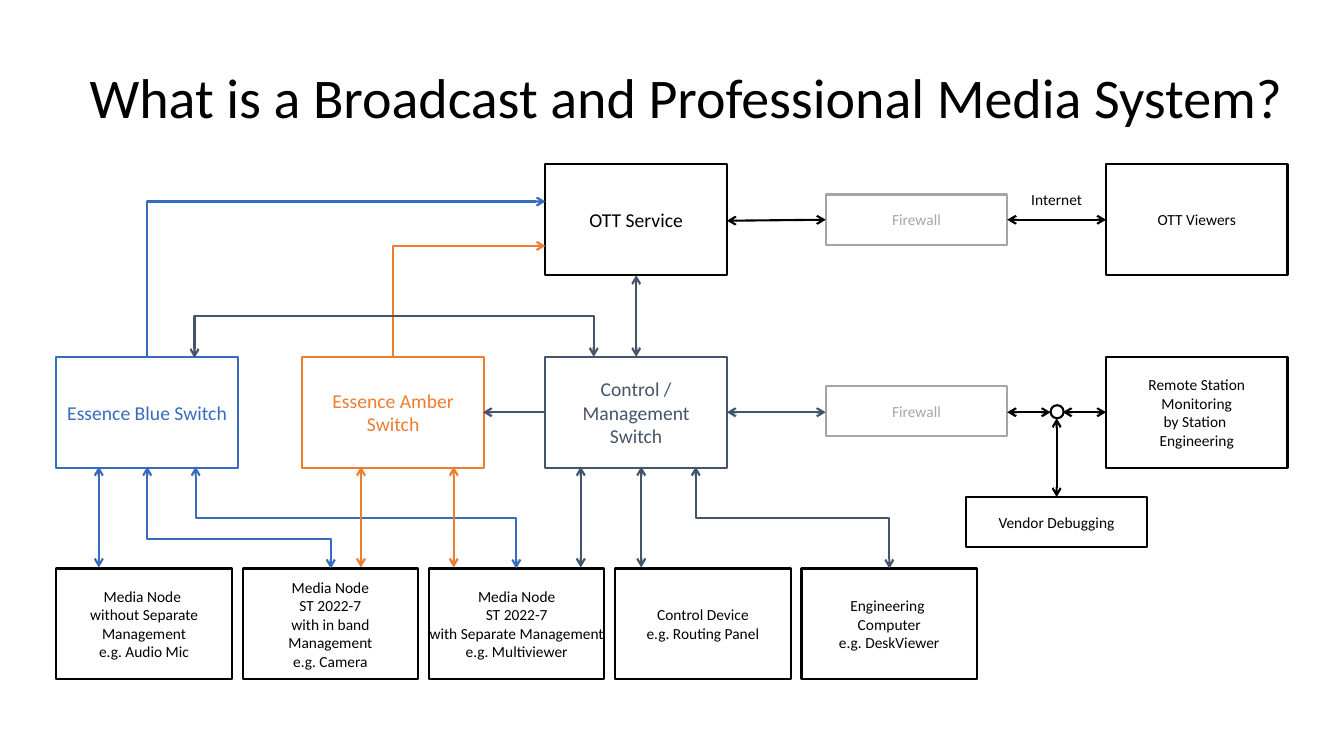
from dataclasses import dataclass

from pptx import Presentation
from pptx import util as u
from pptx.dml.color import RGBColor
from pptx.enum import shapes, text
from pptx.oxml.ns import qn
from lxml import etree

FONT = "Calibri"
BLACK, WHITE, GREY = "000000", "FFFFFF", "A5A5A5"
BLUE, AMBER, SLATE = "376BBF", "ED7D31", "44546A"
LINE_PT = 1.5
BOX_W, BOX_H, SLIM_H = 1.8, 1.1, 0.5
NODE_W, NODE_PITCH = 1.74, 1.8475
LEFT, OTT_Y, SWITCH_Y, NODE_Y = 0.56, 1.63, 3.54, 5.64
CONTROL_X, FIREWALL_X, RIGHT_X = 5.41, 8.19, 10.97
SWITCH_BOTTOM, NODE_TOP = 4.63, 5.63


@dataclass
class Box:
    x: float
    y: float
    paragraphs: tuple[str, ...]
    w: float = BOX_W
    h: float = BOX_H
    size: int = 11
    color: str = BLACK
    inset: bool = True


@dataclass
class Arrow:
    x1: float
    y1: float
    x2: float
    y2: float
    color: str = BLACK
    both: bool = True


@dataclass
class Elbow(Arrow):
    """Leaves vertically; bends at height via_y, or at y2 if that is None."""
    via_y: float | None = None


NODES = [
    ("Media Node ", "without Separate Management", "e.g. Audio Mic"),
    ("Media Node", "ST 2022-7", "with in band\nManagement", "e.g. Camera"),
    ("Media Node", "ST 2022-7", "with Separate Management", "e.g. Multiviewer"),
    ("Control Device\ne.g. Routing Panel",),
    ("Engineering \nComputer", "e.g. DeskViewer"),
]

BOXES = [
    Box(CONTROL_X, OTT_Y, ("OTT Service",), size=14),
    Box(CONTROL_X, SWITCH_Y, ("Control / Management Switch",), size=14, color=SLATE),
    Box(3, SWITCH_Y, ("Essence Amber Switch",), size=14, color=AMBER),
    Box(LEFT, SWITCH_Y, ("Essence Blue Switch",), size=14, color=BLUE),
    Box(FIREWALL_X, 1.93, ("Firewall",), h=SLIM_H, color=GREY),
    Box(FIREWALL_X, 3.83, ("Firewall",), h=SLIM_H, color=GREY),
    Box(RIGHT_X, OTT_Y, ("OTT Viewers",)),
    Box(9.58, 4.93, ("Vendor Debugging",), h=SLIM_H),
    Box(RIGHT_X, SWITCH_Y, ("Remote Station Monitoring\nby Station \nEngineering",)),
] + [
    Box(LEFT + i * NODE_PITCH, NODE_Y, label, w=NODE_W, inset=False)
    for i, label in enumerate(NODES)
]

ARROWS = [
    Arrow(x, SWITCH_BOTTOM, x, NODE_TOP, color)
    for x, color in [(0.98, BLUE), (3.58, AMBER), (4.5, AMBER), (5.76, SLATE), (6.36, SLATE)]
] + [
    Arrow(6.31, 2.73, 6.31, SWITCH_Y, SLATE),
    Arrow(CONTROL_X, 4.09, 4.79, 4.09, SLATE, both=False),
    Arrow(7.21, 2.19, FIREWALL_X, 2.18),
    Arrow(7.21, 4.09, FIREWALL_X, 4.09, SLATE),
    Arrow(9.99, 4.09, 10.42, 4.09),
    Arrow(10.54, 4.09, RIGHT_X, 4.09),
    Arrow(10.48, 4.15, 10.48, 4.93),
    Arrow(9.99, 2.18, RIGHT_X, 2.18),
]

ELBOWS = [
    Elbow(1.46, SWITCH_BOTTOM, 3.28, NODE_Y, BLUE, via_y=5.35),
    Elbow(1.94, SWITCH_BOTTOM, 5.12, NODE_Y, BLUE, via_y=5.14),
    Elbow(6.9, SWITCH_BOTTOM, 8.82, NODE_Y, SLATE, via_y=5.14),
    Elbow(1.46, SWITCH_Y, CONTROL_X, 2, BLUE, both=False),
    Elbow(3.9, SWITCH_Y, CONTROL_X, 2.44, AMBER, both=False),
    Elbow(5.89, SWITCH_Y, 1.93, 3.55, SLATE, via_y=3.13),
]


def rgb(color: str) -> RGBColor:
    return RGBColor.from_string(color)


def write(tf, paragraphs: tuple[str, ...], size: int, color: str, align) -> None:
    tf.word_wrap = True
    for i, paragraph in enumerate(paragraphs):
        p = tf.add_paragraph() if i else tf.paragraphs[0]
        p.alignment = align
        for j, line in enumerate(paragraph.split("\n")):
            if j:
                p.add_line_break()
            r = p.add_run()
            r.text = line
            r.font.name = FONT
            r.font.size = u.Pt(size)
            r.font.color.rgb = rgb(color)


def add_label(s, x: float, y: float, w: float, h: float, label: str, size: int, align) -> None:
    tb = s.shapes.add_textbox(*map(u.Inches, (x, y, w, h)))
    write(tb.text_frame, (label,), size, BLACK, align)


def add_outline(s, kind, x: float, y: float, w: float, h: float, color: str):
    sp = s.shapes.add_shape(kind, *map(u.Inches, (x, y, w, h)))
    sp.shadow.inherit = False
    sp.fill.background()
    sp.line.color.rgb = rgb(color)
    sp.line.width = u.Pt(LINE_PT)
    return sp


def add_box(s, box: Box) -> None:
    sp = add_outline(s, shapes.MSO_SHAPE.RECTANGLE, box.x, box.y, box.w, box.h, box.color)
    tf = sp.text_frame
    tf.vertical_anchor = text.MSO_ANCHOR.MIDDLE
    if not box.inset:
        tf.margin_left = tf.margin_right = tf.margin_top = tf.margin_bottom = 0
    write(tf, box.paragraphs, box.size, box.color, text.PP_ALIGN.CENTER)


def style_connector(c, arrow: Arrow) -> None:
    c.line.color.rgb = rgb(arrow.color)
    c.line.width = u.Pt(LINE_PT)
    sp_pr = c.element.spPr
    ln = sp_pr.find(qn("a:ln"))
    for end in ("a:headEnd", "a:tailEnd") if arrow.both else ("a:tailEnd",):
        etree.SubElement(ln, qn(end), type="arrow")
    etree.SubElement(sp_pr, qn("a:effectLst"))


def add_arrow(s, a: Arrow) -> None:
    ends = map(u.Inches, (a.x1, a.y1, a.x2, a.y2))
    style_connector(s.shapes.add_connector(shapes.MSO_CONNECTOR.STRAIGHT, *ends), a)


def add_elbow(s, e: Elbow) -> None:
    """Turn a horizontal-first elbow a quarter so that it starts vertically."""
    dx, dy = e.x2 - e.x1, e.y2 - e.y1
    w, h = abs(dy), abs(dx)
    left, top = (e.x1 + e.x2 - w) / 2, (e.y1 + e.y2 - h) / 2
    c = s.shapes.add_connector(
        shapes.MSO_CONNECTOR.ELBOW, *map(u.Inches, (left, top, left + w, top + h)))
    xfrm = c.element.spPr.find(qn("a:xfrm"))
    xfrm.set("rot", str((270 if dy > 0 else 90) * 60000))
    xfrm.set("flipH", "1")
    if (dy > 0) != (dx > 0):
        xfrm.set("flipV", "1")
    geom = c.element.spPr.find(qn("a:prstGeom"))
    if e.via_y is None:
        geom.set("prst", "bentConnector2")
    else:
        bend = round((e.via_y - e.y1) / dy * 100000)
        etree.SubElement(geom.find(qn("a:avLst")), qn("a:gd"), name="adj1", fmla=f"val {bend}")
    style_connector(c, e)


def main() -> None:
    prs = Presentation()
    prs.slide_width, prs.slide_height = u.Inches(13.33), u.Inches(7.5)
    s = prs.slides.add_slide(prs.slide_layouts[6])
    add_label(s, 0.79, 0.57, 12.25, 0.77,
              "What is a Broadcast and Professional Media System?", 40, text.PP_ALIGN.LEFT)
    for box in BOXES:
        add_box(s, box)
    for elbow in ELBOWS:
        add_elbow(s, elbow)
    for arrow in ARROWS:
        add_arrow(s, arrow)
    junction = add_outline(s, shapes.MSO_SHAPE.OVAL, 10.42, 4.02, 0.13, 0.13, BLACK)
    junction.fill.solid()
    junction.fill.fore_color.rgb = rgb(WHITE)
    add_label(s, 9.99, 1.84, 0.98, 0.29, "Internet", 11, text.PP_ALIGN.CENTER)
    prs.save("out.pptx")


if __name__ == "__main__":
    main()
